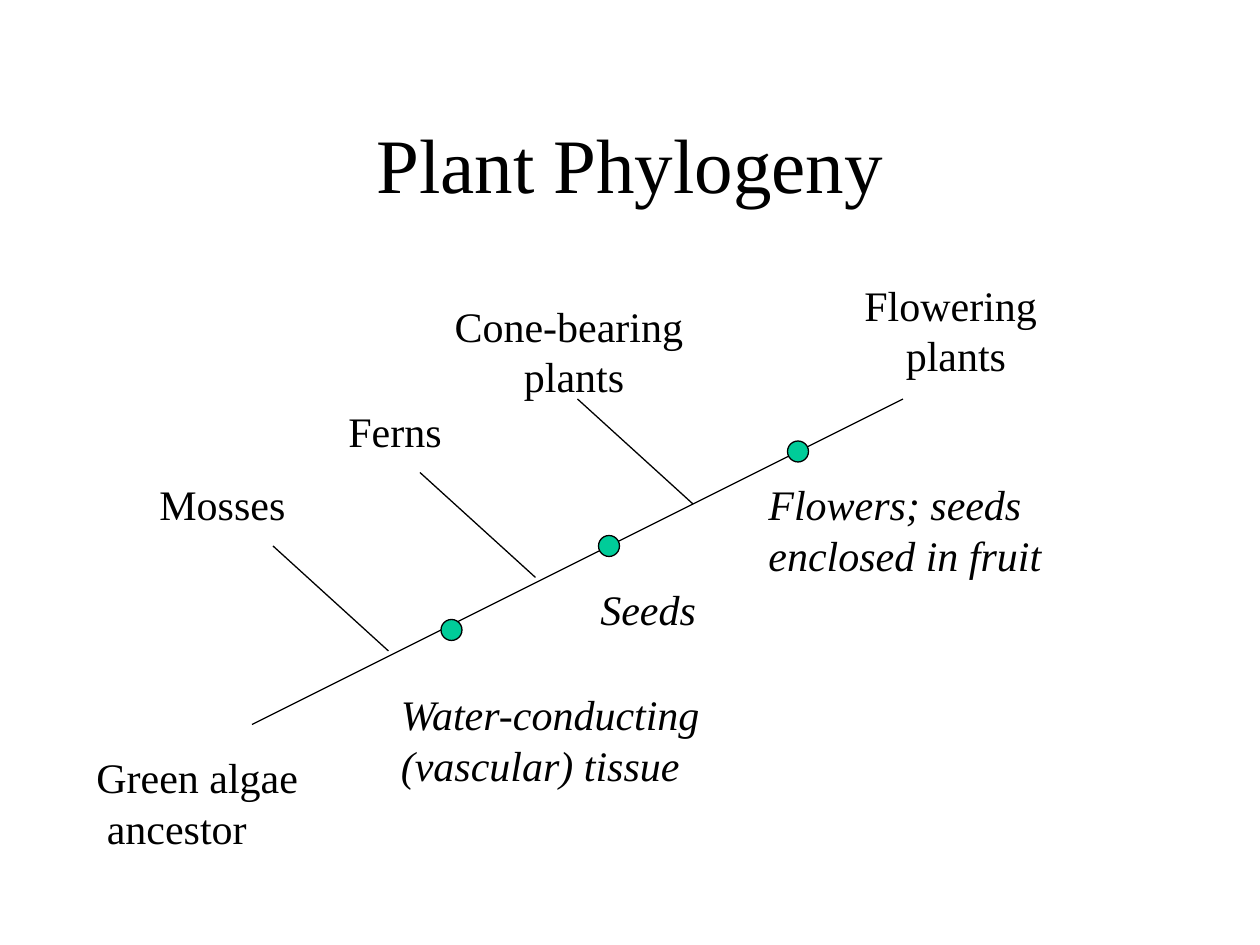
from pptx import Presentation
from pptx.dml.color import RGBColor
from pptx.enum.shapes import MSO_CONNECTOR as Conn, MSO_SHAPE as Shape
from pptx.enum.text import MSO_ANCHOR as Anchor, MSO_AUTO_SIZE as Fit, PP_ALIGN as Align
from pptx.oxml.ns import qn
from pptx.util import Inches, Pt
from lxml.etree import SubElement

FONT = "Times New Roman"
INK, GREEN = "000000", "00CC99"
DOT = 2  # dot width in grid steps


def grid(n):
    """Length of n grid steps, twelve to the inch."""
    return Inches(n / 12)


def color(code):
    return RGBColor.from_string(code)


def write(par, text, size, slant=False, align=Align.LEFT):
    par.alignment = align
    run = par.add_run()
    run.text = text
    font = run.font
    font.name, font.size, font.italic = FONT, Pt(size), slant
    font.color.rgb = color(INK)


def add_title(slide, text):
    title = slide.shapes.title
    title.left, title.top = grid(9), grid(8)
    title.width, title.height = grid(102), grid(15)
    frame = title.text_frame
    frame.vertical_anchor = Anchor.MIDDLE
    write(frame.paragraphs[0], text, 44, align=Align.CENTER)


def add_line(slide, start, end):
    ends = [grid(n) for n in (*start, *end)]
    line = slide.shapes.add_connector(Conn.STRAIGHT, *ends)
    line.line.color.rgb = color(INK)
    line.line.width = Pt(0.75)
    SubElement(line._element.spPr, qn("a:effectLst"))


def add_dot(slide, col, row):
    dot = slide.shapes.add_shape(Shape.OVAL, grid(col), grid(row), grid(DOT), grid(DOT))
    dot.shadow.inherit = False
    dot.fill.solid()
    dot.fill.fore_color.rgb = color(GREEN)
    dot.line.color.rgb = color(INK)
    dot.line.width = Pt(0.75)


def add_label(slide, col, row, width, lines, slant=False, align=Align.LEFT):
    height = 0.11 + 0.4 * len(lines)
    box = slide.shapes.add_textbox(grid(col), grid(row), Inches(width), Inches(height))
    frame = box.text_frame
    frame.word_wrap = False
    frame.auto_size = Fit.SHAPE_TO_FIT_TEXT
    for i, text in enumerate(lines):
        par = frame.add_paragraph() if i else frame.paragraphs[0]
        write(par, text, 24, slant, align)


def main():
    prs = Presentation()
    prs.slide_width, prs.slide_height = Inches(10), Inches(7.5)
    slide = prs.slides.add_slide(prs.slide_layouts[5])
    add_title(slide, "Plant Phylogeny")

    # Trunk, and a branch to each side group
    add_line(slide, (24, 69), (86, 38))
    for fork, tip in (((37, 62), (26, 52)), ((51, 55), (40, 45)), ((66, 48), (55, 38))):
        add_line(slide, fork, tip)

    # Plant groups
    add_label(slide, 8, 71, 1.82, ["Green algae", " ancestor"])
    add_label(slide, 14, 45, 1.21, ["Mosses"])
    add_label(slide, 32, 38, 0.95, ["Ferns"])
    add_label(slide, 42, 28, 2.03, ["Cone-bearing", " plants"], align=Align.CENTER)
    add_label(slide, 81, 26, 1.59, ["Flowering", " plants"], align=Align.CENTER)

    # Traits gained along the trunk
    for col, row in ((42, 59), (57, 51), (75, 42)):
        add_dot(slide, col, row)
    add_label(slide, 37, 65, 2.69, ["Water-conducting", "(vascular) tissue"], slant=True)
    add_label(slide, 56, 55, 1.06, ["Seeds"], slant=True)
    add_label(slide, 72, 45, 2.48, ["Flowers; seeds", "enclosed in fruit"], slant=True)

    prs.save("out.pptx")


if __name__ == "__main__":
    main()
